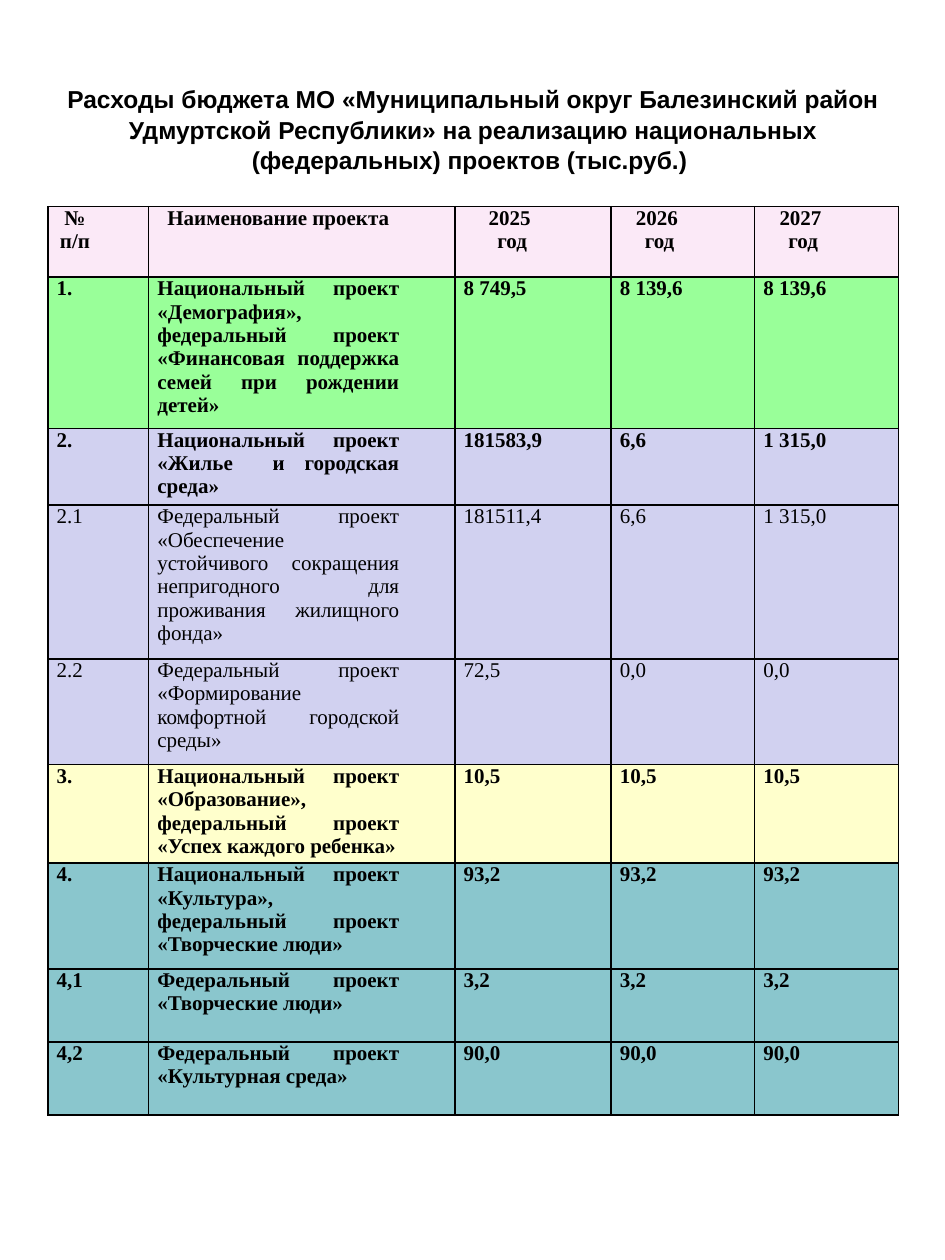
import pptx
import pptx.util
import pptx.dml.color
import pptx.enum.text
import pptx.oxml
import pptx.oxml.ns

Inches = pptx.util.Inches
Pt = pptx.util.Pt
RGBColor = pptx.dml.color.RGBColor
ALIGN = pptx.enum.text.PP_ALIGN

BLACK = RGBColor(0x00, 0x00, 0x00)
PINK = RGBColor(0xFB, 0xE9, 0xF7)
GREEN = RGBColor(0x99, 0xFF, 0x99)
LILAC = RGBColor(0xD1, 0xD1, 0xF0)
YELLOW = RGBColor(0xFF, 0xFF, 0xCC)
TEAL = RGBColor(0x8A, 0xC6, 0xCD)

LEFT, WIDTH = 0.38, 6.75
TITLE = ("Расходы бюджета МО «Муниципальный округ Балезинский район "
         "Удмуртской Республики» на реализацию национальных "
         "(федеральных) проектов (тыс.руб.) ")
COLUMN_WIDTHS = [0.8, 2.43, 1.24, 1.14, 1.14]
HEADER = ["№\nп/п", "Наименование проекта", "2025\n год", "2026 \nгод", "2027 \nгод"]
PROJECTS = [
    (1.2, GREEN, True, ["1.", "Национальный проект «Демография», федеральный проект "
                        "«Финансовая поддержка семей при рождении детей»",
                        "8 749,5", "8 139,6", "8 139,6"]),
    (0.61, LILAC, True, ["2.", "Национальный проект «Жилье  и городская среда»",
                         "181583,9", "6,6", "1 315,0"]),
    (1.22, LILAC, False, ["2.1", "Федеральный проект «Обеспечение устойчивого сокращения "
                          "непригодного для проживания жилищного фонда»",
                          "181511,4", "6,6", "1 315,0"]),
    (0.84, LILAC, False, ["2.2", "Федеральный проект «Формирование комфортной городской среды»",
                          "72,5", "0,0", "0,0"]),
    (0.78, YELLOW, True, ["3.", "Национальный проект «Образование», федеральный проект "
                          "«Успех каждого ребенка»", "10,5", "10,5", "10,5"]),
    (0.84, TEAL, True, ["4.", "Национальный проект «Культура», федеральный проект "
                        "«Творческие люди»", "93,2", "93,2", "93,2"]),
    (0.58, TEAL, True, ["4,1", "Федеральный проект «Творческие люди»", "3,2", "3,2", "3,2"]),
    (0.58, TEAL, True, ["4,2", "Федеральный проект «Культурная среда»", "90,0", "90,0", "90,0"]),
]


class Page:
    body_font = "Times New Roman"
    title_font = "Arial"
    body_size = 12
    title_size = 14
    side_inset = 0.07
    right_indent = 0.37

    def __init__(self, prs):
        self.s = prs.slides.add_slide(prs.slide_layouts[5])

    def run(self, p, text, font, size, bold):
        r = p.add_run()
        r.text = text
        r.font.name = font
        r.font.size = Pt(size)
        r.font.bold = bold
        r.font.color.rgb = BLACK

    def title(self, text, top, height):
        sp = self.s.shapes.title
        sp.left, sp.top = Inches(LEFT), Inches(top)
        sp.width, sp.height = Inches(WIDTH), Inches(height)
        tf = sp.text_frame
        tf.word_wrap = True
        tf.auto_size = pptx.enum.text.MSO_AUTO_SIZE.NONE
        tf.vertical_anchor = pptx.enum.text.MSO_ANCHOR.MIDDLE
        p = tf.paragraphs[0]
        p.alignment = ALIGN.CENTER
        p.line_spacing = 1.05
        self.run(p, text, self.title_font, self.title_size, True)

    def borders(self, cell):
        tcPr = cell._tc.get_or_add_tcPr()
        for i, side in enumerate(("lnL", "lnR", "lnT", "lnB")):
            tcPr.insert(i, pptx.oxml.parse_xml(
                f'<a:{side} {pptx.oxml.ns.nsdecls("a")} w="{Pt(1)}"><a:solidFill>'
                f'<a:srgbClr val="{BLACK}"/></a:solidFill></a:{side}>'))

    def cell(self, cell, text, fill, bold, alignment):
        cell.fill.solid()
        cell.fill.fore_color.rgb = fill
        cell.margin_left = cell.margin_right = Inches(self.side_inset)
        cell.margin_top = cell.margin_bottom = 0
        self.borders(cell)
        tf = cell.text_frame
        for i, line in enumerate(text.split("\n")):
            p = tf.add_paragraph() if i else tf.paragraphs[0]
            p.alignment = alignment
            p._p.get_or_add_pPr().set("marR", str(Inches(self.right_indent)))
            self.run(p, line, self.body_font, self.body_size, bold)

    def table(self, rows, widths, top):
        height = sum(row[0] for row in rows)
        table = self.s.shapes.add_table(
            len(rows), len(widths), Inches(LEFT), Inches(top),
            Inches(WIDTH), Inches(height)).table
        for column, width in zip(table.columns, widths):
            column.width = Inches(width)
        for i, (row_height, fill, bold, texts) in enumerate(rows):
            table.rows[i].height = Inches(row_height)
            alignment = ALIGN.JUSTIFY if i else ALIGN.CENTER
            for j, text in enumerate(texts):
                self.cell(table.cell(i, j), text, fill, bold, alignment)


def main():
    prs = pptx.Presentation()
    prs.slide_width, prs.slide_height = Inches(7.5), Inches(10)
    page = Page(prs)
    page.title(TITLE, 0.4, 1.24)
    page.table([(0.56, PINK, True, HEADER)] + PROJECTS, COLUMN_WIDTHS, 1.64)
    prs.save("out.pptx")


if __name__ == "__main__":
    main()
